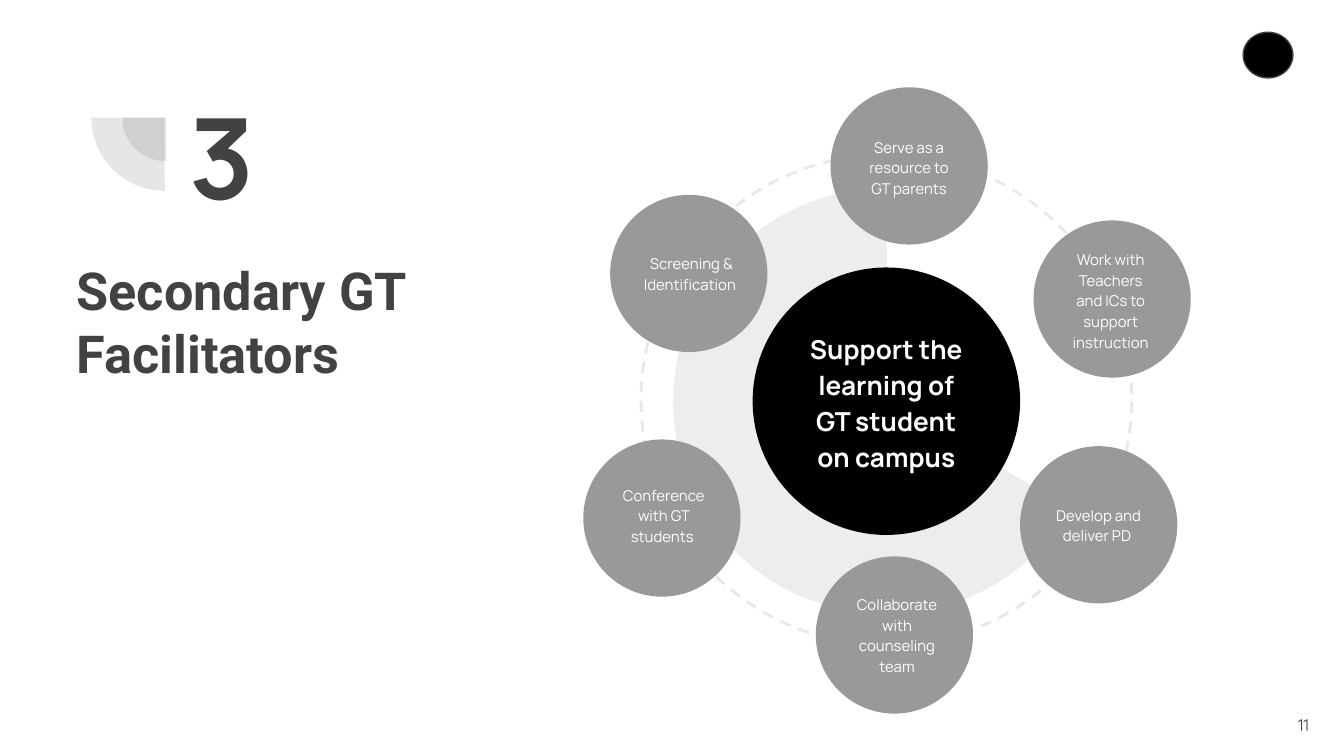
from dataclasses import dataclass
from typing import Optional

from lxml import etree
from pptx import Presentation
from pptx.dml.color import RGBColor
from pptx.enum.dml import MSO_LINE
from pptx.enum.shapes import MSO_SHAPE
from pptx.enum.text import MSO_ANCHOR, MSO_AUTO_SIZE, PP_ALIGN
from pptx.oxml.ns import qn
from pptx.util import Inches, Pt

OVAL, PIE = MSO_SHAPE.OVAL, MSO_SHAPE.PIE
DASH = MSO_LINE.DASH
TOP, MIDDLE = MSO_ANCHOR.TOP, MSO_ANCHOR.MIDDLE
LEFT, CENTER, RIGHT = PP_ALIGN.LEFT, PP_ALIGN.CENTER, PP_ALIGN.RIGHT
NO_FIT = MSO_AUTO_SIZE.NONE

BLACK = RGBColor(0x00, 0x00, 0x00)
WHITE = RGBColor(0xFF, 0xFF, 0xFF)
DARK = RGBColor(0x42, 0x42, 0x42)
GRAY = RGBColor(0x99, 0x99, 0x99)
PALE = RGBColor(0xE8, 0xE8, 0xE8)

SLIDE_WIDTH = 10
SLIDE_HEIGHT = SLIDE_WIDTH * 9 / 16
SPOKE_SIZE = 1.17
LABEL_HEIGHT = 0.8
QUADRANT = (107.93, 162)
SWEEP = (18.12, 162.15)


@dataclass
class Box:
    left: float
    top: float
    width: float
    height: float

    def lengths(self) -> tuple:
        return tuple(map(Inches, (self.left, self.top, self.width, self.height)))


@dataclass
class Style:
    size: float
    font: str
    color: RGBColor
    bold: bool = False
    align: PP_ALIGN = CENTER
    anchor: MSO_ANCHOR = MIDDLE
    spacing: float = 1.0


@dataclass
class Spoke:
    text: str
    left: float
    top: float
    label_left: float
    label_top: float
    label_width: float = 0.83
    label_height: float = LABEL_HEIGHT


HUB_STYLE = Style(14, "Manrope", WHITE, bold=True, spacing=1.15)
SPOKE_STYLE = Style(8, "Manrope", WHITE, spacing=1.15)
TITLE_STYLE = Style(28, "Roboto", DARK, bold=True, align=LEFT, anchor=TOP)
NUMERAL_STYLE = Style(60, "Manrope", DARK, bold=True)
PAGE_STYLE = Style(9, "Quicksand", DARK, align=RIGHT)

SPOKES = [
    Spoke("Work with Teachers and ICs to support instruction", 7.69, 1.64, 7.85, 1.83),
    Spoke("Conference with GT students ", 4.34, 3.27, 4.51, 3.45, 0.86, 0.76),
    Spoke("Develop and deliver PD ", 7.59, 3.32, 7.76, 3.5),
    Spoke("Serve as a resource to GT parents", 6.18, 0.65, 6.35, 0.84),
    Spoke("Collaborate with counseling team", 6.07, 4.14, 6.24, 4.32, 0.87),
    Spoke("Screening & Identification ", 4.54, 1.45, 4.64, 1.63, 1.01),
]


def write(sp, text: str, style: Style) -> None:
    tf = sp.text_frame
    tf.word_wrap = True
    tf.auto_size = NO_FIT
    tf.vertical_anchor = style.anchor
    tf.margin_left = tf.margin_right = tf.margin_top = tf.margin_bottom = Inches(0.1)
    p = tf.paragraphs[0]
    p.alignment = style.align
    p.line_spacing = style.spacing
    r = p.add_run()
    r.text = text
    r.font.size = Pt(style.size)
    r.font.name = style.font
    r.font.bold = style.bold
    r.font.color.rgb = style.color


def add_text(s, box: Box, text: str, style: Style) -> None:
    write(s.shapes.add_textbox(*box.lengths()), text, style)


def add_figure(s, kind: MSO_SHAPE, box: Box, fill: Optional[RGBColor] = None,
               line: Optional[RGBColor] = None, weight: float = 0.75):
    sp = s.shapes.add_shape(kind, *box.lengths())
    sp.shadow.inherit = False
    if fill is None:
        sp.fill.background()
    else:
        sp.fill.solid()
        sp.fill.fore_color.rgb = fill
    if line is None:
        sp.line.fill.background()
    else:
        sp.line.color.rgb = line
        sp.line.width = Pt(weight)
    return sp


def add_pie(s, box: Box, angles: tuple, color: RGBColor, opacity: int,
            rotation: float = 0) -> None:
    sp = add_figure(s, PIE, box, color)
    sp.rotation = rotation
    for i, angle in enumerate(angles):
        sp.adjustments[i] = angle
    clr = sp.element.spPr.find(qn("a:solidFill"))[0]
    etree.SubElement(clr, qn("a:alpha")).set("val", str(opacity * 1000))


def add_spoke(s, spoke: Spoke) -> None:
    add_figure(s, OVAL, Box(spoke.left, spoke.top, SPOKE_SIZE, SPOKE_SIZE), GRAY)
    label = Box(spoke.label_left, spoke.label_top, spoke.label_width, spoke.label_height)
    add_text(s, label, spoke.text, SPOKE_STYLE)


def main() -> None:
    prs = Presentation()
    prs.slide_width, prs.slide_height = Inches(SLIDE_WIDTH), Inches(SLIDE_HEIGHT)
    s = prs.slides.add_slide(prs.slide_layouts[5])

    title = s.shapes.title
    title.left, title.top, title.width, title.height = Box(0.47, 1.82, 3.28, 3.22).lengths()
    write(title, "Secondary GT Facilitators", TITLE_STYLE)

    for box in (Box(0.91, 0.55, 0.65, 0.65), Box(0.68, 0.33, 1.09, 1.09)):
        add_pie(s, box, QUADRANT, DARK, 13, rotation=270)
    add_text(s, Box(9.24, 5.18, 0.6, 0.43), "11", PAGE_STYLE)

    ring = add_figure(s, OVAL, Box(4.77, 1.15, 3.65, 3.65), line=PALE, weight=1.5)
    ring.line.dash_style = DASH
    ring.rotation = 270
    add_pie(s, Box(5.01, 1.4, 3.17, 3.17), SWEEP, BLACK, 7)
    add_figure(s, OVAL, Box(5.6, 1.99, 1.99, 1.99), BLACK)
    add_text(s, Box(5.86, 2.53, 1.47, 0.9),
             "Support the learning of GT student on campus", HUB_STYLE)
    for spoke in SPOKES:
        add_spoke(s, spoke)

    add_text(s, Box(0.89, 0.39, 1.52, 1.52), "3", NUMERAL_STYLE)
    add_figure(s, OVAL, Box(9.25, 0.24, 0.37, 0.34), BLACK, DARK)
    prs.save("out.pptx")


if __name__ == "__main__":
    main()
